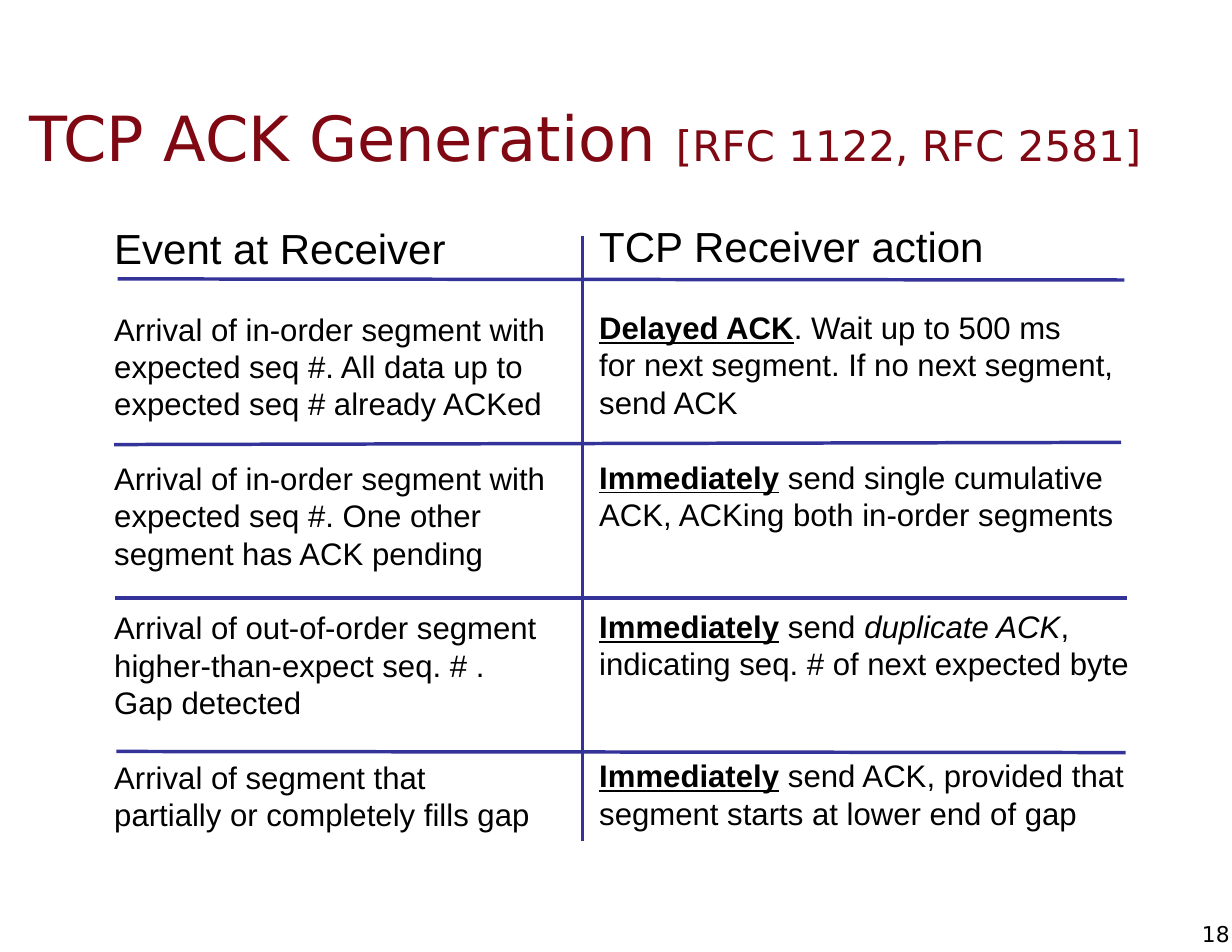
from pptx import Presentation
from pptx.dml.color import RGBColor
from pptx.enum.shapes import MSO_CONNECTOR
from pptx.enum.text import MSO_ANCHOR, MSO_AUTO_SIZE, PP_ALIGN
from pptx.oxml.ns import qn
from pptx.util import Pt
from lxml import etree

STRAIGHT = MSO_CONNECTOR.STRAIGHT
TOP, MID = MSO_ANCHOR.TOP, MSO_ANCHOR.MIDDLE
LEFT, RIGHT = PP_ALIGN.LEFT, PP_ALIGN.RIGHT
NO_FIT = MSO_AUTO_SIZE.NONE

BLACK, RED, BLUE = "000000", "7F0813", "333399"
PLAIN = {}
STRONG = {"bold": True, "underline": True}
SLANT = {"italic": True}
PITCH = 24  # line height of body text

# Each column: heading, then (blank lines before, lines); a line is a list of runs.
EVENTS = ("Event at Receiver", [
    (1, [[("Arrival of in-order segment with", PLAIN)],
         [("expected seq #. All data up to", PLAIN)],
         [("expected seq # already ACKed", PLAIN)]]),
    (1, [[("Arrival of in-order segment with", PLAIN)],
         [("expected seq #. One other", PLAIN)],
         [("segment has ACK pending", PLAIN)]]),
    (1, [[("Arrival of out-of-order segment", PLAIN)],
         [("higher-than-expect seq. # .", PLAIN)],
         [("Gap detected", PLAIN)]]),
    (1, [[("Arrival of segment that", PLAIN)],
         [("partially or completely fills gap", PLAIN)]]),
])
ACTIONS = ("TCP Receiver action", [
    (1, [[("Delayed ACK", STRONG), (". Wait up to 500 ms", PLAIN)],
         [("for next segment. If no next segment,", PLAIN)],
         [("send ACK", PLAIN)]]),
    (1, [[("Immediately", STRONG), (" send single cumulative", PLAIN)],
         [("ACK, ACKing both in-order segments", PLAIN)]]),
    (2, [[("Immediately", STRONG), (" send ", PLAIN),
          ("duplicate ACK", SLANT), (",", PLAIN)],
         [("indicating seq. # of next expected byte", PLAIN)]]),
    (2, [[("Immediately", STRONG), (" send ACK, provided that", PLAIN)],
         [("segment starts at lower end of gap", PLAIN)]]),
])
RULES = [
    (75.6, 179.3, 722.9, 180),
    (73.4, 285.8, 720.7, 284.4),
    (74.2, 384.5, 724.3, 384.5),
    (74.9, 483.1, 723.6, 483.8),
    (374.4, 151.9, 374.4, 540.7),
]


def color(code):
    return RGBColor.from_string(code)


def set_all(item, values):
    for name, value in values.items():
        setattr(item, name, value)


def set_frame(frame, anchor, side, edge):
    set_all(frame, {
        "word_wrap": True, "auto_size": NO_FIT, "vertical_anchor": anchor,
        "margin_left": Pt(side), "margin_right": Pt(side),
        "margin_top": Pt(edge), "margin_bottom": Pt(edge)})


def add_run(para, text, size, face, code, style=PLAIN):
    run = para.add_run()
    run.text = text
    set_all(run.font, {"size": Pt(size), "name": face, **style})
    run.font.color.rgb = color(code)


def add_title(slide, box):
    title = slide.shapes.title
    set_all(title, dict(zip(("left", "top", "width", "height"), map(Pt, box))))
    set_frame(title.text_frame, MID, 7.92, 4.32)
    para = title.text_frame.paragraphs[0]
    para.alignment = LEFT
    add_run(para, "TCP ACK Generation ", 40, "DejaVu Sans", RED)
    add_run(para, "[RFC 1122, RFC 2581]", 27, "DejaVu Sans", RED)


def add_column(slide, box, column):
    head, groups = column
    frame = slide.shapes.add_textbox(*map(Pt, box)).text_frame
    set_frame(frame, TOP, 7.92, 4.32)
    para = frame.paragraphs[0]
    para.line_spacing = Pt(32)
    add_run(para, head, 27, "Arial", BLACK)
    for gap, lines in groups:
        for i, line in enumerate(lines):
            para = frame.add_paragraph()
            para.line_spacing = Pt(PITCH)
            para.space_before = Pt(0 if i else gap * PITCH)
            for text, style in line:
                add_run(para, text, 20, "Arial", BLACK, style)


def add_rule(slide, ends):
    rule = slide.shapes.add_connector(STRAIGHT, *map(Pt, ends))
    rule.line.color.rgb = color(BLUE)
    rule.line.width = Pt(2.25)
    etree.SubElement(rule._element.spPr, qn("a:effectLst"))


def add_number(slide, box):
    frame = slide.shapes.add_textbox(*map(Pt, box)).text_frame
    set_frame(frame, MID, 0, 0)
    para = frame.paragraphs[0]
    para.alignment = RIGHT
    add_run(para, "18", 14, "DejaVu Sans", BLACK)


def main():
    deck = Presentation()
    deck.slide_width, deck.slide_height = Pt(792), Pt(612)
    slide = deck.slides.add_slide(deck.slide_layouts[5])
    add_title(slide, (10.8, 50.4, 758.2, 74.9))
    add_column(slide, (65.5, 139, 296.6, 440.6), EVENTS)
    add_column(slide, (377.3, 138, 360.7, 438.5), ACTIONS)
    for ends in RULES:
        add_rule(slide, ends)
    add_number(slide, (766.1, 591.8, 24.5, 17.3))
    deck.save("out.pptx")


if __name__ == "__main__":
    main()
